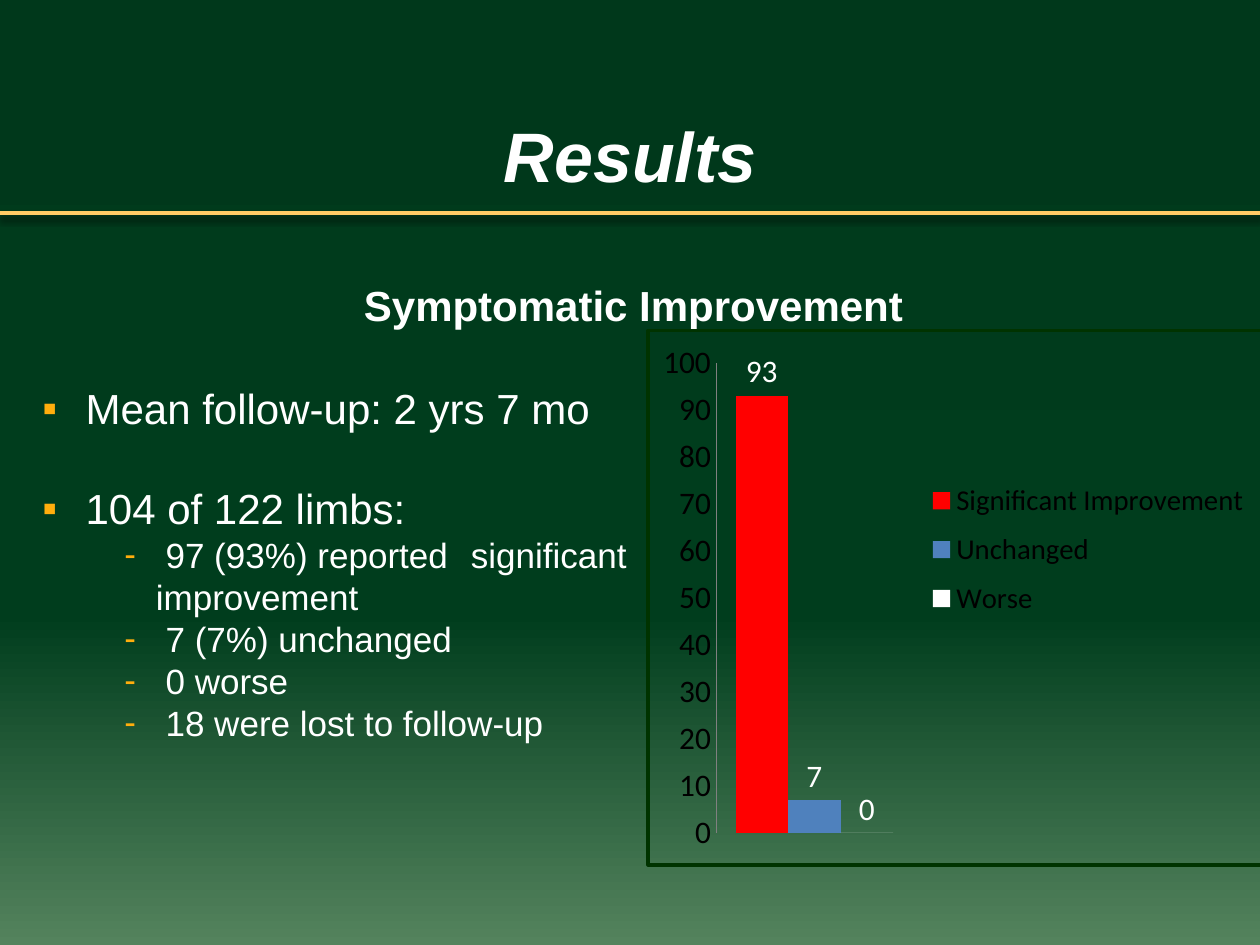
from lxml import etree
from pptx import Presentation
from pptx.chart.data import CategoryChartData
from pptx.dml.color import RGBColor
from pptx.enum.chart import XL_CHART_TYPE, XL_LABEL_POSITION, XL_LEGEND_POSITION, XL_TICK_MARK
from pptx.enum.shapes import MSO_CONNECTOR
from pptx.enum.text import MSO_ANCHOR, PP_ALIGN
from pptx.oxml import parse_xml
from pptx.oxml.ns import nsdecls, qn
from pptx.util import Pt

COLUMNS = XL_CHART_TYPE.COLUMN_CLUSTERED
OUTSIDE_END = XL_LABEL_POSITION.OUTSIDE_END
LEGEND_RIGHT = XL_LEGEND_POSITION.RIGHT
NO_TICKS = XL_TICK_MARK.NONE
STRAIGHT = MSO_CONNECTOR.STRAIGHT
BOTTOM = MSO_ANCHOR.BOTTOM
CENTER = PP_ALIGN.CENTER

COLORS = {
    "top": "00381B", "middle": "003D1D", "bottom": "54835D",
    "gold": "FFCC66", "bullet": "FFAE0D", "white": "FFFFFF", "black": "000000",
    "red": "FF0000", "blue": "4F81BD", "axis": "808080", "frame": "003300",
}
GRADIENT = [(0, "top"), (65, "middle"), (100, "bottom")]
SERIES = [("Significant Improvement", 93, "red"), ("Unchanged", 7, "blue"), ("Worse", 0, "white")]
# level, text, space before
FINDINGS = [
    (1, " Mean follow-up: 2 yrs 7 mo", 0),
    (1, " 104 of 122 limbs:", 28.6),
    (2, " 97 (93%) reported \tsignificant improvement", 0),
    (2, " 7 (7%) unchanged", 0),
    (2, " 0 worse", 0),
    (2, " 18 were lost to follow-up", 0),
]
# level: bullet, text size, line height, left margin
LEVELS = {1: ("▪", 24, 28.6, 25.2), 2: ("-", 20, 24, 72)}
HANGING = 18
TAB_STOP = 252


def rgb(name):
    return RGBColor.from_string(COLORS[name])


def format_font(font, size, color, name="Arial", bold=False, italic=False):
    font.name, font.size, font.bold, font.italic = name, Pt(size), bold, italic
    font.color.rgb = rgb(color)


def paint_background(page):
    fill = page.background.fill
    fill.gradient()
    fill.gradient_angle = 270
    stops = page.background._cSld.find(".//" + qn("a:gsLst"))
    for stop in list(stops):
        stops.remove(stop)
    for percent, color in GRADIENT:
        stop = etree.SubElement(stops, qn("a:gs"), pos=str(percent * 1000))
        etree.SubElement(stop, qn("a:srgbClr"), val=COLORS[color])


def add_rule(page):
    """Draw the gold line below the title, with its soft shadow."""
    rule = page.shapes.add_connector(STRAIGHT, Pt(0), Pt(121.7), Pt(720), Pt(121.7))
    rule.line.color.rgb = rgb("gold")
    rule.line.width = Pt(2.25)
    rule._element.spPr.append(parse_xml(
        f'<a:effectLst {nsdecls("a")}>'
        f'<a:outerShdw blurRad="{Pt(3.8)}" dist="{Pt(3)}" dir="5400000" rotWithShape="0">'
        f'<a:srgbClr val="{COLORS["black"]}"><a:alpha val="48000"/></a:srgbClr>'
        '</a:outerShdw></a:effectLst>'))


def add_title(page):
    title = page.shapes.title
    title.left, title.top, title.width, title.height = Pt(72), Pt(25.2), Pt(576), Pt(90.7)
    title.text_frame.vertical_anchor = BOTTOM
    para = title.text_frame.paragraphs[0]
    para.alignment = CENTER
    span = para.add_run()
    span.text = "Results"
    format_font(span.font, 40, "white", bold=True, italic=True)


def add_text_box(page, left, top, width, height):
    box = page.shapes.add_textbox(Pt(left), Pt(top), Pt(width), Pt(height))
    box.text_frame.word_wrap = True
    return box.text_frame


def add_subtitle(page):
    para = add_text_box(page, 74, 156, 576, 46).paragraphs[0]
    para.alignment = CENTER
    span = para.add_run()
    span.text = "Symptomatic Improvement"
    format_font(span.font, 24, "white", bold=True)


def set_bullet(para, bullet, margin):
    properties = para._p.get_or_add_pPr()
    properties.set("marL", str(Pt(margin)))
    properties.set("indent", str(Pt(-HANGING)))
    color = etree.SubElement(properties, qn("a:buClr"))
    etree.SubElement(color, qn("a:srgbClr"), val=COLORS["bullet"])
    etree.SubElement(properties, qn("a:buFont"), typeface="Arial")
    etree.SubElement(properties, qn("a:buChar"), char=bullet)
    return properties


def add_findings(page):
    frame = add_text_box(page, 10, 215.3, 381.6, 215.3)
    for index, (level, text, space) in enumerate(FINDINGS):
        para = frame.add_paragraph() if index else frame.paragraphs[0]
        bullet, size, line_height, margin = LEVELS[level]
        properties = set_bullet(para, bullet, margin)
        if "\t" in text:
            tabs = etree.SubElement(properties, qn("a:tabLst"))
            etree.SubElement(tabs, qn("a:tab"), pos=str(Pt(TAB_STOP)), algn="l")
        para.level = level - 1
        para.line_spacing = Pt(line_height)
        if index:
            para.space_before = Pt(space)
        span = para.add_run()
        span.text = text
        format_font(span.font, size, "white")


def place(element, left, top, width, height, inner=False):
    """Build a manual chart layout, in fractions of the chart."""
    target = '<c:layoutTarget val="inner"/>' if inner else ""
    values = "".join(f'<c:{tag} val="{value}"/>' for tag, value in
                     zip("xywh", (left, top, width, height)))
    layout = parse_xml(
        f'<c:layout {nsdecls("c")}><c:manualLayout>{target}<c:xMode val="edge"/>'
        f'<c:yMode val="edge"/>{values}</c:manualLayout></c:layout>')
    for old in element.findall(qn("c:layout")):
        element.remove(old)
    element.insert(1 if element.find(qn("c:legendPos")) is not None else 0, layout)


def add_frame(chart):
    chart._chartSpace.find(qn("c:chart")).addnext(parse_xml(
        f'<c:spPr {nsdecls("c", "a")}><a:noFill/><a:ln w="{Pt(2)}"><a:solidFill>'
        f'<a:srgbClr val="{COLORS["frame"]}"/></a:solidFill></a:ln></c:spPr>'))


def add_improvement_chart(page):
    data = CategoryChartData()
    data.categories = ["1"]
    for name, value, _ in SERIES:
        data.add_series(name, [value])
    chart = page.shapes.add_chart(
        COLUMNS, Pt(369.4), Pt(187.9), Pt(353.5), Pt(307.4), data).chart
    chart.has_title = False
    format_font(chart.font, 18, "black", "Calibri")
    add_frame(chart)

    chart.category_axis.visible = False
    axis = chart.value_axis
    axis.minimum_scale, axis.maximum_scale, axis.major_unit = 0, 100, 10
    axis.has_major_gridlines = False
    axis.major_tick_mark = NO_TICKS
    axis.format.line.color.rgb = rgb("axis")
    axis.format.line.width = Pt(0.25)

    plot = chart.plots[0]
    plot.gap_width, plot.overlap, plot.vary_by_categories = 75, 0, False
    for series, (_, _, color) in zip(plot.series, SERIES):
        series.format.fill.solid()
        series.format.fill.fore_color.rgb = rgb(color)
        labels = series.data_labels
        labels.show_value = True
        labels.position = OUTSIDE_END
        format_font(labels.font, 18, "white", "Calibri")

    chart.has_legend = True
    chart.legend.position = LEGEND_RIGHT
    chart.legend.include_in_layout = False
    format_font(chart.legend.font, 16.5, "black", "Calibri")
    place(chart._chartSpace.find(".//" + qn("c:plotArea")), 0.11, 0.06, 0.32, 0.88, inner=True)
    place(chart.legend._element, 0.44, 0.26, 0.55, 0.3)


def main():
    deck = Presentation()
    deck.slide_width, deck.slide_height = Pt(720), Pt(540)
    page = deck.slides.add_slide(deck.slide_layouts[5])
    paint_background(page)
    add_rule(page)
    add_title(page)
    add_subtitle(page)
    add_findings(page)
    add_improvement_chart(page)
    deck.save("out.pptx")


if __name__ == "__main__":
    main()
